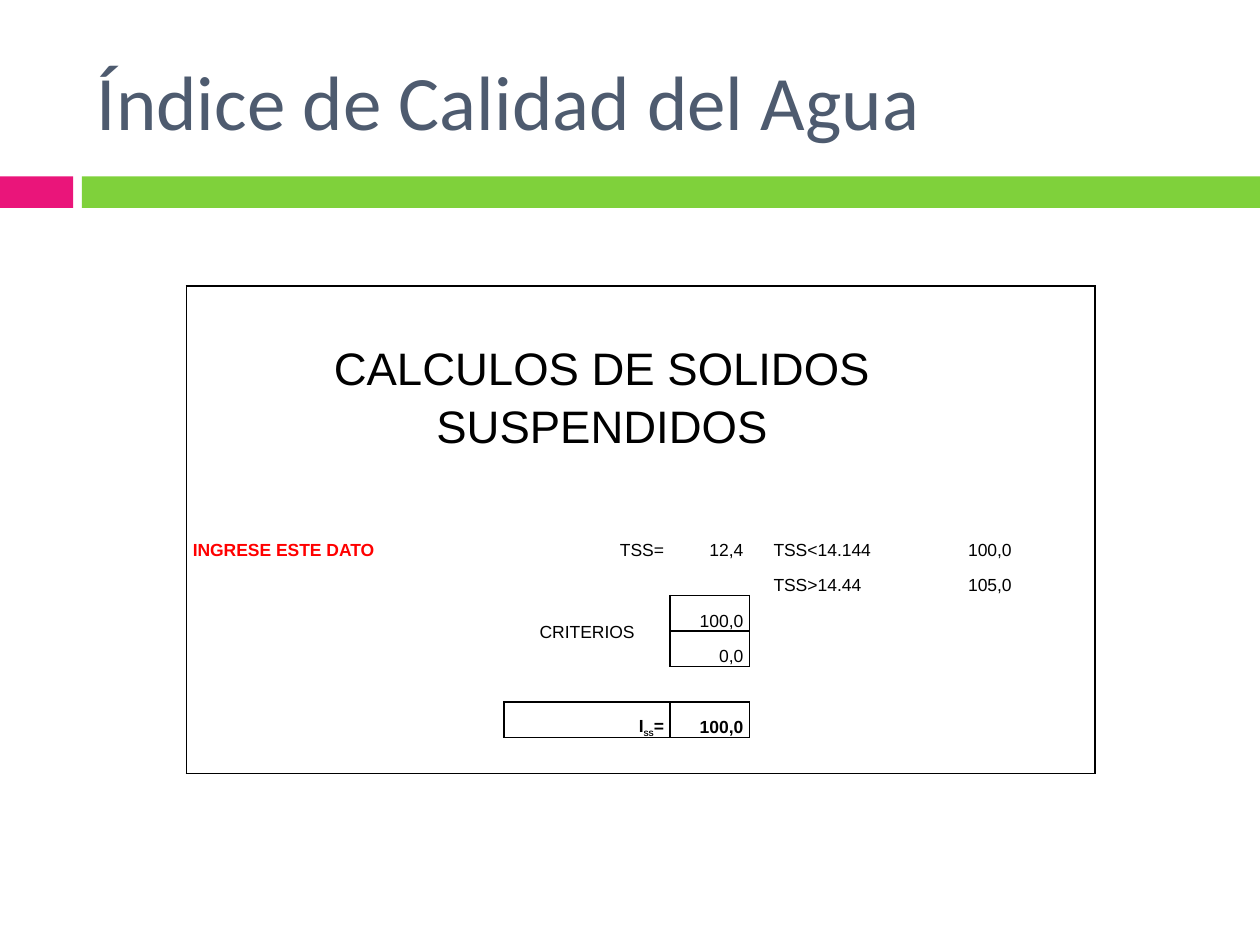
from lxml import etree
from pptx import Presentation
from pptx.dml.color import RGBColor
from pptx.enum.shapes import MSO_SHAPE
from pptx.enum.text import MSO_ANCHOR, PP_ALIGN
from pptx.oxml.ns import qn
from pptx.util import Inches, Pt

BLACK, RED = "000000", "FF0000"
LEFT, CENTER, RIGHT = PP_ALIGN.LEFT, PP_ALIGN.CENTER, PP_ALIGN.RIGHT
PLAIN_TABLE_STYLE = "{2D5ABB26-0587-4C30-8999-92F81FD0307C}"

COLUMN_WIDTHS = [2.52, 1.32, 0.63, 0.14, 1.36, 0.63, 0.61]
ROW_COUNT = 10
TITLE_ROW_HEIGHT = 1.33

# (row, column): (text pieces, alignment, font values)
CELL_TEXTS = {
    (0, 0): (["CALCULOS DE SOLIDOS SUSPENDIDOS"], CENTER, {"size": Pt(26)}),
    (3, 0): (["INGRESE ESTE DATO"], LEFT, {"bold": True, "color": RED}),
    (3, 1): (["TSS="], RIGHT, {}),
    (3, 2): (["12,4"], RIGHT, {}),
    (3, 4): (["TSS<14.144"], LEFT, {}),
    (3, 5): (["100,0"], RIGHT, {}),
    (4, 4): (["TSS>14.44"], LEFT, {}),
    (4, 5): (["105,0"], RIGHT, {}),
    (5, 1): (["CRITERIOS"], CENTER, {}),
    (5, 2): (["100,0"], RIGHT, {}),
    (6, 2): (["0,0"], RIGHT, {}),
    (8, 1): (["I", "SS", "="], RIGHT, {"bold": True}),
    (8, 2): (["100,0"], RIGHT, {"bold": True}),
}
SUBSCRIPT = "SS"
MERGES = [((0, 0), (0, 5)), ((5, 1), (6, 1))]
# Outlined blocks: first and last cell
OUTLINES = [((0, 0), (9, 6))] + [(cell, cell) for cell in [(5, 2), (6, 2), (8, 1), (8, 2)]]


def color(value):
    return RGBColor.from_string(value)


def format_font(font, values):
    for name, value in values.items():
        if name == "color":
            font.color.rgb = color(value)
        else:
            setattr(font, name, value)


def add_bands(slide, left, top, width, height):
    """Short accent band and long band, separated by a gap."""
    accent, gap = 0.58, 0.07
    rest = accent + gap
    for x, band_width, fill in [(left, accent, "EA157A"), (left + rest, width - rest, "7FD13B")]:
        shape = slide.shapes.add_shape(
            MSO_SHAPE.RECTANGLE, Inches(x), Inches(top), Inches(band_width), Inches(height))
        shape.shadow.inherit = False
        shape.fill.solid()
        shape.fill.fore_color.rgb = color(fill)
        shape.line.fill.background()


def add_title(slide, left, top, width, height):
    box = slide.shapes.add_textbox(Inches(left), Inches(top), Inches(width), Inches(height))
    frame = box.text_frame
    frame.word_wrap = True
    frame.vertical_anchor = MSO_ANCHOR.MIDDLE
    run = frame.paragraphs[0].add_run()
    run.text = "Índice de Calidad del Agua"
    format_font(run.font, {"name": "Calibri", "size": Pt(44), "color": "4E5B6F"})


def fill_cell(cell, pieces, alignment, values):
    paragraph = cell.text_frame.paragraphs[0]
    paragraph.alignment = alignment
    paragraph.line_spacing = 1.15
    for piece in pieces:
        run = paragraph.add_run()
        run.text = piece
        format_font(run.font, {"name": "Arial", "size": Pt(10), "color": BLACK, **values})
        if piece == SUBSCRIPT:
            run.font.size = Pt(7.5)
            run._r.get_or_add_rPr().set("baseline", "-25000")


def outline_sides(row, column):
    """Sides of a cell that lie on the edge of an outlined block."""
    sides = set()
    for (top, left), (bottom, right) in OUTLINES:
        if top <= row <= bottom and left <= column <= right:
            edges = {"L": column == left, "R": column == right,
                     "T": row == top, "B": row == bottom}
            sides.update(side for side, on_edge in edges.items() if on_edge)
    return sides


def draw_borders(cell, sides):
    properties = cell._tc.get_or_add_tcPr()
    for side in "LRTB":
        if side in sides:
            line = etree.SubElement(properties, qn(f"a:ln{side}"), w=str(Pt(1)))
            fill = etree.SubElement(line, qn("a:solidFill"))
            etree.SubElement(fill, qn("a:srgbClr"), val=BLACK)


def add_calculation_table(slide, left, top, width, height):
    frame = slide.shapes.add_table(
        ROW_COUNT, len(COLUMN_WIDTHS), Inches(left), Inches(top), Inches(width), Inches(height))
    table = frame.table
    table.first_row = table.horz_banding = False
    table._tbl.tblPr.find(qn("a:tableStyleId")).text = PLAIN_TABLE_STYLE
    for column, column_width in zip(table.columns, COLUMN_WIDTHS):
        column.width = Inches(column_width)
    row_height = (height - TITLE_ROW_HEIGHT) / (ROW_COUNT - 1)
    for index, row in enumerate(table.rows):
        row.height = Inches(row_height if index else TITLE_ROW_HEIGHT)

    for first, last in MERGES:
        table.cell(*first).merge(table.cell(*last))

    for row in range(ROW_COUNT):
        for column in range(len(COLUMN_WIDTHS)):
            cell = table.cell(row, column)
            cell.margin_left = cell.margin_right = Inches(0.05)
            cell.margin_top = cell.margin_bottom = 0
            cell.vertical_anchor = MSO_ANCHOR.BOTTOM
            draw_borders(cell, outline_sides(row, column))
            cell.fill.background()
            if (row, column) in CELL_TEXTS:
                fill_cell(cell, *CELL_TEXTS[row, column])
            else:
                # Small type keeps empty rows at their set height
                paragraph = cell.text_frame.paragraphs[0]
                etree.SubElement(paragraph._p, qn("a:endParaRPr"), sz="1000")
    table.cell(5, 1).vertical_anchor = MSO_ANCHOR.MIDDLE


def main():
    presentation = Presentation()
    presentation.slide_width = Inches(10)
    presentation.slide_height = Inches(7.5)
    slide = presentation.slides.add_slide(presentation.slide_layouts[6])
    add_bands(slide, 0, 1.4, 10, 0.25)
    add_title(slide, 0.67, 0.25, 8.92, 1.08)
    add_calculation_table(slide, 1.48, 2.27, 7.21, 3.87)
    presentation.save("out.pptx")


if __name__ == "__main__":
    main()
